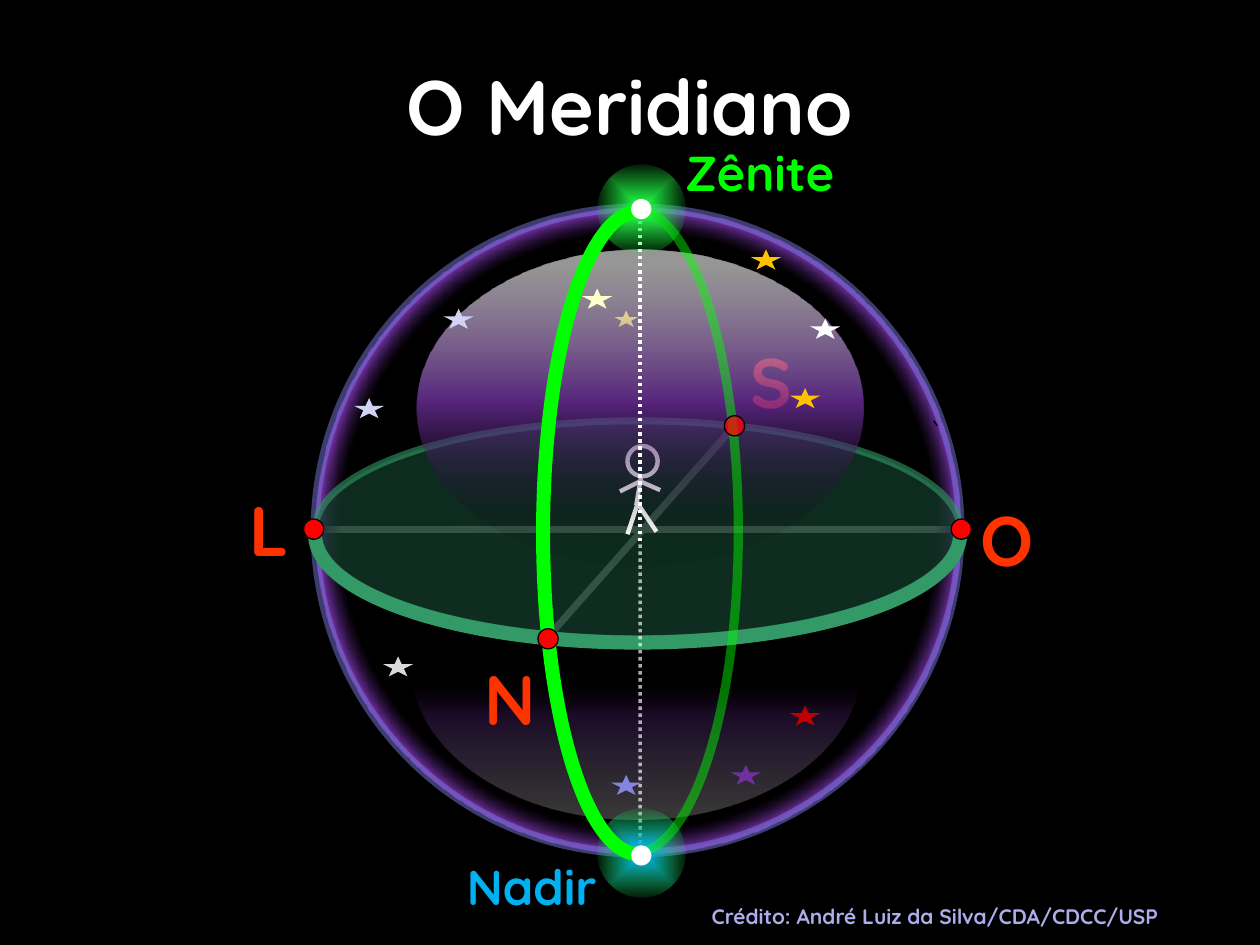
from lxml.etree import SubElement
from pptx import Presentation
from pptx.dml.color import RGBColor
from pptx.enum.dml import MSO_LINE
from pptx.enum.shapes import MSO_CONNECTOR, MSO_SHAPE
from pptx.enum.text import MSO_ANCHOR, PP_ALIGN
from pptx.oxml.ns import qn
from pptx.util import Pt

PX = 9144  # 100 px to the inch
FONT = "Quicksand"
COLORS = {
    "black": "000000", "white": "FFFFFF", "purple": "7030A0", "rim": "7878DE",
    "label": "FF3300", "point": "FF0000", "plane": "143C2B", "horizon": "339966",
    "green": "00FF00", "glow": "21FF46", "blue": "00B0F0", "credit": "ADADEB",
    "yellow": "FFFF00", "ice": "D2D2F4", "gold": "FFC000", "cream": "FFFFCC",
    "red": "C00000", "lilac": "8585E0", "grey": "D9D9D9",
}

deck = Presentation()
deck.slide_width, deck.slide_height = 1000 * PX, 750 * PX
page = deck.slides.add_slide(deck.slide_layouts[5])
page.background.fill.solid()
page.background.fill.fore_color.rgb = RGBColor.from_string(COLORS["black"])


def place(kind, box, fill=None, line=None, turn=0, alpha=100, line_alpha=100, dash=None):
    """Draw a preset shape, or a straight line from (x, y) to (x, y) if kind is None.

    fill is a colour name, line a (colour name, points) pair; alphas are percentages.
    """
    box = [length * PX for length in box]
    if kind is None:
        item = page.shapes.add_connector(MSO_CONNECTOR.STRAIGHT, *box)
        SubElement(item._element.spPr, qn("a:effectLst"))
    else:
        item = page.shapes.add_shape(kind, *box)
        item.shadow.inherit = False
        item.rotation = turn
        if fill:
            item.fill.solid()
            item.fill.fore_color.rgb = RGBColor.from_string(COLORS[fill])
        else:
            item.fill.background()
    if line:
        item.line.color.rgb = RGBColor.from_string(COLORS[line[0]])
        item.line.width = Pt(line[1])
        if dash:
            item.line.dash_style = dash
    else:
        item.line.fill.background()
    properties = item._element.spPr
    for parent, percent in ((properties, alpha), (properties.find(qn("a:ln")), line_alpha)):
        if percent < 100:
            color = parent.find(qn("a:solidFill")).find(qn("a:srgbClr"))
            SubElement(color, qn("a:alpha"), val=str(percent * 1000))
    return item


def blend(shape, stops, angle=None, route=None):
    """Fill with a gradient of (position, colour name, alpha) stops, linear or from the centre."""
    properties = shape._element.spPr
    gradient = SubElement(properties, qn("a:gradFill"), rotWithShape="1")
    stop_list = SubElement(gradient, qn("a:gsLst"))
    for position, name, alpha in stops:
        stop = SubElement(stop_list, qn("a:gs"), pos=str(position * 1000))
        color = SubElement(stop, qn("a:srgbClr"), val=COLORS[name])
        SubElement(color, qn("a:alpha"), val=str(alpha * 1000))
    if route:
        center = SubElement(gradient, qn("a:path"), path=route)
        SubElement(center, qn("a:fillToRect"), l="50000", t="50000", r="50000", b="50000")
    else:
        SubElement(gradient, qn("a:lin"), ang=str(angle * 60000), scaled="0")
    properties.replace(properties.find(qn("a:noFill")), gradient)


# Title
title = page.shapes.title
title.left, title.top, title.width, title.height = 75 * PX, 21 * PX, 850 * PX, 125 * PX
title.text_frame.vertical_anchor = MSO_ANCHOR.MIDDLE

# Lower dome, ground axes and celestial sphere
lower_dome = place(MSO_SHAPE.MOON, (443, 410, 123, 358), turn=270)
lower_dome.adjustments[0] = 0.875
blend(lower_dome, [(3, "white", 37), (68, "purple", 41), (94, "black", 0)], angle=0)
for axis in ((430, 511, 583, 338), (250, 420, 762, 420)):
    place(None, axis, line=("white", 4))
sphere = place(MSO_SHAPE.OVAL, (250, 165, 512, 512), line=("rim", 5), line_alpha=50)
blend(sphere, [(65, "black", 40), (70, "purple", 100)], route="circle")

# Title and label text
texts = [(title, "O Meridiano", 44, "white", PP_ALIGN.CENTER)]
for words, box, size, color, align in (
    ("L", (188, 381, 39, 77), 40, "label", PP_ALIGN.LEFT),
    ("S", (586, 264, 39, 77), 40, "label", PP_ALIGN.LEFT),
    ("O", (768, 389, 39, 77), 40, "label", PP_ALIGN.LEFT),
    ("N", (375, 515, 39, 77), 40, "label", PP_ALIGN.LEFT),
    ("Zênite", (517, 108, 172, 57), 28, "green", PP_ALIGN.CENTER),
    ("Nadir", (336, 675, 172, 57), 28, "blue", PP_ALIGN.CENTER),
    ("Crédito: André Luiz da Silva/CDA/CDCC/USP", (555, 712, 445, 30), 12, "credit", PP_ALIGN.LEFT),
):
    label = page.shapes.add_textbox(*[length * PX for length in box])
    label.text_frame.word_wrap = True
    texts.append((label, words, size, color, align))
for holder, words, size, color, align in texts:
    para = holder.text_frame.paragraphs[0]
    para.alignment = align
    span = para.add_run()
    span.text = words
    span.font.name, span.font.size, span.font.bold = FONT, Pt(size), True
    span.font.color.rgb = RGBColor.from_string(COLORS[color])

# Horizon plane and its front edge; arc adjustments are 0.6 per degree
place(MSO_SHAPE.OVAL, (250, 334, 512, 173), "plane", ("horizon", 4), alpha=73, line_alpha=60)
place(None, (744, 338, 741, 334), line=("black", 0.75))
horizon_front = place(MSO_SHAPE.ARC, (250, 338, 512, 172), "plane", ("horizon", 8), alpha=7)
horizon_front.adjustments[0] = 359 * 0.6
horizon_front.adjustments[1] = 182 * 0.6

# Observer and the star behind the dome
place(MSO_SHAPE.STAR_5_POINT, (485, 245, 24, 16), "yellow", ("black", 0.75))
place(MSO_SHAPE.OVAL, (498, 354, 24, 24), line=("white", 2.5))
for limb in (
    (509, 377, 505, 401), (505, 398, 521, 422), (506, 400, 498, 424),
    (508, 382, 524, 389), (492, 390, 508, 382),
):
    place(None, limb, line=("white", 2.5))

# East, south and west points, then the upper dome over them
for left, top in ((241, 412), (575, 330), (755, 412)):
    place(MSO_SHAPE.OVAL, (left, top, 16, 16), "point", ("black", 0.75))
upper_dome = place(MSO_SHAPE.OVAL, (331, 198, 354, 252))
blend(upper_dome, [(6, "white", 58), (48, "purple", 77), (91, "black", 2)], angle=90)

# Stars
for left, top, color in (
    (281, 316, "ice"), (352, 245, "ice"), (627, 308, "gold"), (596, 198, "gold"),
    (643, 253, "white"), (462, 229, "cream"), (580, 607, "purple"),
    (627, 560, "red"), (485, 615, "lilac"), (304, 521, "grey"),
):
    place(MSO_SHAPE.STAR_5_POINT, (left, top, 24, 16), color)

# Vertical axis with the zenith and nadir glows
for top, bottom, alpha, glow_top, core in (
    (164, 432, 100, 131, "glow"), (432, 684, 65, 642, "blue"),
):
    place(None, (508, top, 508, bottom), line=("white", 2),
          line_alpha=alpha, dash=MSO_LINE.ROUND_DOT)
    glow = place(MSO_SHAPE.OVAL, (474, glow_top, 70, 70), turn=305.7)
    blend(glow, [(7, core, 100), (77, "glow", 2)], route="shape")

# Meridian: far side, then near side
for box, width, alpha, start, end in (
    ((421, 166, 165, 511), 5.25, 46, 270.74, 91.39),
    ((431, 168, 152, 510), 8, 100, 90, 272),
):
    meridian = place(MSO_SHAPE.ARC, box, line=("green", width), line_alpha=alpha)
    meridian.adjustments[0] = start * 0.6
    meridian.adjustments[1] = end * 0.6

# North and south points, zenith and nadir
place(MSO_SHAPE.OVAL, (427, 499, 16, 16), "point", ("black", 0.75))
place(MSO_SHAPE.OVAL, (575, 330, 16, 16), "point", ("black", 0.75), alpha=65)
for top in (158, 671):
    place(MSO_SHAPE.OVAL, (501, top, 16, 16), "white")

deck.save("out.pptx")
